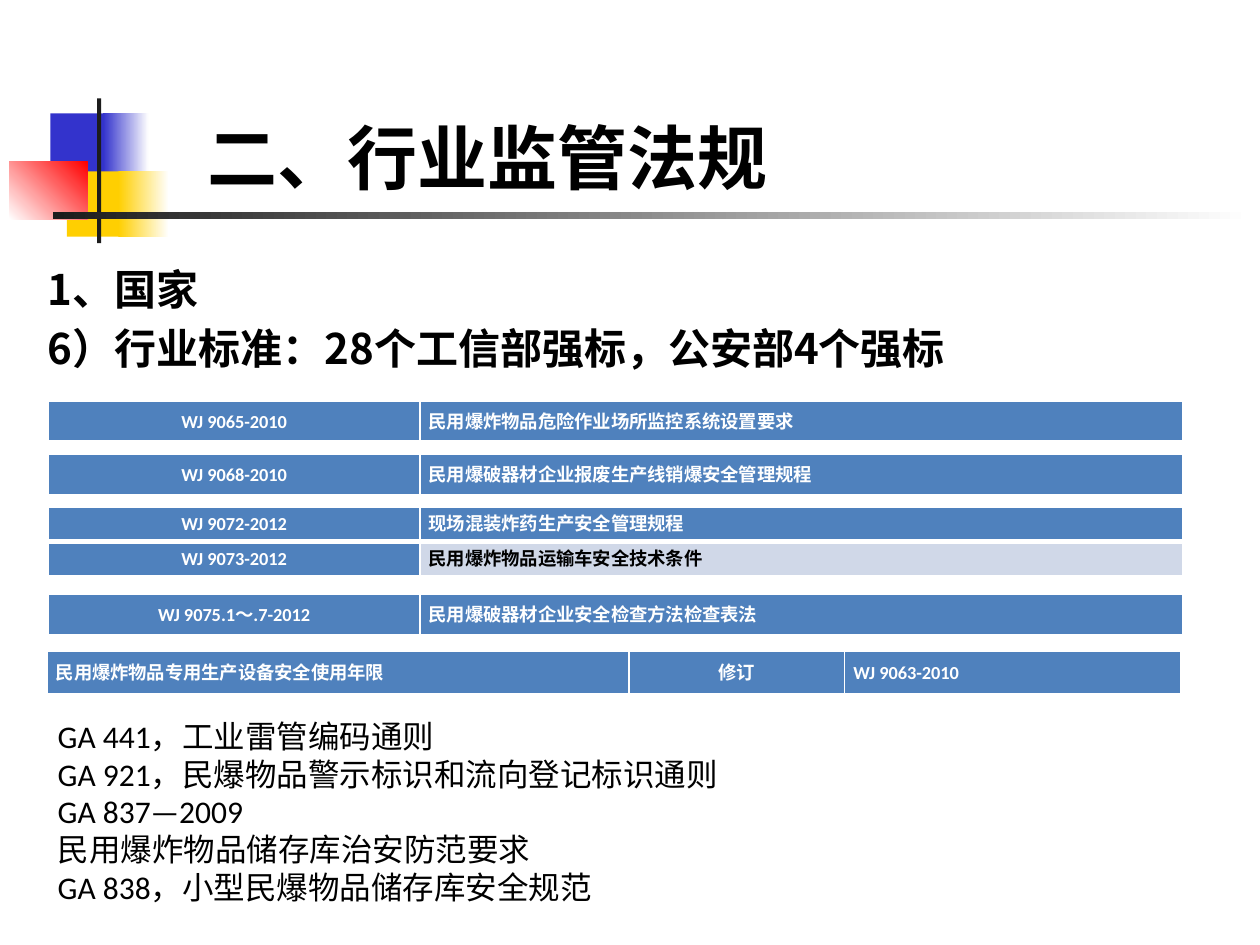
from lxml import etree
from pptx import Presentation, util as u
from pptx.dml import color
from pptx.enum import shapes, text
from pptx.oxml import ns

BLUE, PALE, WHITE, BLACK = "4F81BD", "D0D8E8", "FFFFFF", "000000"
LEFT, CENTER = text.PP_ALIGN.LEFT, text.PP_ALIGN.CENTER
CELL_INSET = 5


def rgb(value):
    return color.RGBColor.from_string(value)


def points(*values):
    return [u.Pt(value) for value in values]


def write(frame, lines, size, font="Calibri", fill=BLACK, bold=False,
          align=LEFT, anchor=text.MSO_ANCHOR.TOP, hanging=0, line=None, gap=0):
    frame.word_wrap = True
    frame.vertical_anchor = anchor
    for index, words in enumerate(lines):
        para = frame.paragraphs[0] if index == 0 else frame.add_paragraph()
        para.alignment = align
        if hanging:
            properties = para._p.get_or_add_pPr()
            properties.set("marL", str(u.Pt(hanging)))
            properties.set("indent", str(-u.Pt(hanging)))
        if line:
            para.line_spacing = u.Pt(line)
        if index and gap:
            para.space_before = u.Pt(gap)
        span = para.add_run()
        span.text = words
        span.font.name = font
        span.font.size = u.Pt(size)
        span.font.bold = bold
        span.font.color.rgb = rgb(fill)
        east_asian = etree.SubElement(span._r.get_or_add_rPr(), ns.qn("a:ea"))
        east_asian.set("typeface", font)


def set_borders(cell, **widths):
    """Draw white cell borders; keys are the sides L, R, T and B."""
    properties = cell._tc.get_or_add_tcPr()
    for side, width in widths.items():
        edge = etree.SubElement(properties, ns.qn("a:ln" + side), w=str(u.Pt(width)))
        solid = etree.SubElement(edge, ns.qn("a:solidFill"))
        etree.SubElement(solid, ns.qn("a:srgbClr"), val=WHITE)


class Page:
    def __init__(self, deck):
        self.slide = deck.slides.add_slide(deck.slide_layouts[5])

    def title(self, words, left, top, width, height):
        box = self.slide.shapes.title
        box.left, box.top, box.width, box.height = points(left, top, width, height)
        write(box.text_frame, [words], 40, bold=True, anchor=text.MSO_ANCHOR.MIDDLE)

    def text(self, lines, left, top, width, height, **style):
        box = self.slide.shapes.add_textbox(*points(left, top, width, height))
        write(box.text_frame, lines, **style)

    def ornament(self, blocks):
        """Group rectangles with one colour, or two colours and an angle."""
        group = self.slide.shapes.add_group_shape()
        for place, colours, angle in blocks:
            block = group.shapes.add_shape(shapes.MSO_SHAPE.RECTANGLE, *points(*place))
            block.shadow.inherit = False
            block.line.fill.background()
            if len(colours) == 1:
                block.fill.solid()
                block.fill.fore_color.rgb = rgb(colours[0])
                continue
            block.fill.gradient()
            block.fill.gradient_angle = angle
            for stop, colour in zip(block.fill.gradient_stops, colours):
                stop.color.rgb = rgb(colour)

    def table(self, rows, left, top, widths, row_height, centred):
        """Draw blue rows; rows after the first have a pale last cell."""
        frame = self.slide.shapes.add_table(
            len(rows), len(widths),
            *points(left, top, sum(widths), row_height * len(rows)))
        table = frame.table
        table.first_row = table.horz_banding = False
        for column, width in zip(table.columns, widths):
            column.width = u.Pt(width)
        for r, row in enumerate(rows):
            table.rows[r].height = u.Pt(row_height)
            for c, words in enumerate(row):
                cell = table.cell(r, c)
                pale = r > 0 and c == len(row) - 1
                cell.margin_left = cell.margin_right = u.Pt(CELL_INSET)
                cell.margin_top = cell.margin_bottom = 0
                set_borders(cell, L=1, R=1, T=3 if r else 1, B=1 if r else 3)
                cell.fill.solid()
                cell.fill.fore_color.rgb = rgb(PALE if pale else BLUE)
                write(cell.text_frame, [words], 10.5, bold=True,
                      fill=BLACK if pale else WHITE,
                      align=CENTER if c == centred else LEFT)
                cell.vertical_anchor = text.MSO_ANCHOR.MIDDLE


def main():
    deck = Presentation()
    deck.slide_width, deck.slide_height = points(720, 540)
    page = Page(deck)
    page.title("二、行业监管法规", 111.6, 44.6, 648, 90)
    page.text(["1、国家", "6）行业标准：28个工信部强标，公安部4个强标"],
              20.2, 147, 670, 376, size=24, font="Noto Sans CJK SC", bold=True,
              hanging=27, line=28.8, gap=5)

    blue, yellow, red, dark = "3333CC", "FFCF01", "FF0000", "1C1C1C"
    page.ornament([
        ((28.8, 64.8, 34.6, 37.4), [blue], 0),
        ((59, 64.8, 26, 37.4), [blue, WHITE], 0),
        ((38.2, 97.9, 33.1, 37.4), [yellow], 0),
        ((67.7, 97.9, 28.8, 37.4), [yellow, WHITE], 0),
        ((5.4, 92.2, 44.5, 33.1), [WHITE, red], 45),
        ((55.6, 56.2, 2.2, 82.8), [dark], 0),
        ((30.4, 121.1, 684.7, 4.2), [dark, WHITE], 0),
    ])

    standards = [
        (229.2, 23.8, [("WJ 9065-2010", "民用爆炸物品危险作业场所监控系统设置要求")]),
        (259.7, 23.8, [("WJ 9068-2010", "民用爆破器材企业报废生产线销爆安全管理规程")]),
        (290, 19.6, [("WJ 9072-2012", "现场混装炸药生产安全管理规程"),
                     ("WJ 9073-2012", "民用爆炸物品运输车安全技术条件")]),
        (339.4, 24.4, [("WJ 9075.1～.7-2012", "民用爆破器材企业安全检查方法检查表法")]),
    ]
    for top, row_height, rows in standards:
        page.table(rows, 27.6, top, [212.4, 435.6], row_height, centred=0)
    page.table([("民用爆炸物品专用生产设备安全使用年限", "修订", "WJ 9063-2010")],
               26.9, 372.2, [332.6, 123.2, 192.2], 25.2, centred=1)

    page.text(["GA 441，工业雷管编码通则",
               "GA 921，民爆物品警示标识和流向登记标识通则",
               "GA 837—2009",
               "民用爆炸物品储存库治安防范要求",
               "GA 838，小型民爆物品储存库安全规范"],
              25.9, 406.1, 561, 116.6, size=18)
    deck.save("out.pptx")


if __name__ == "__main__":
    main()
